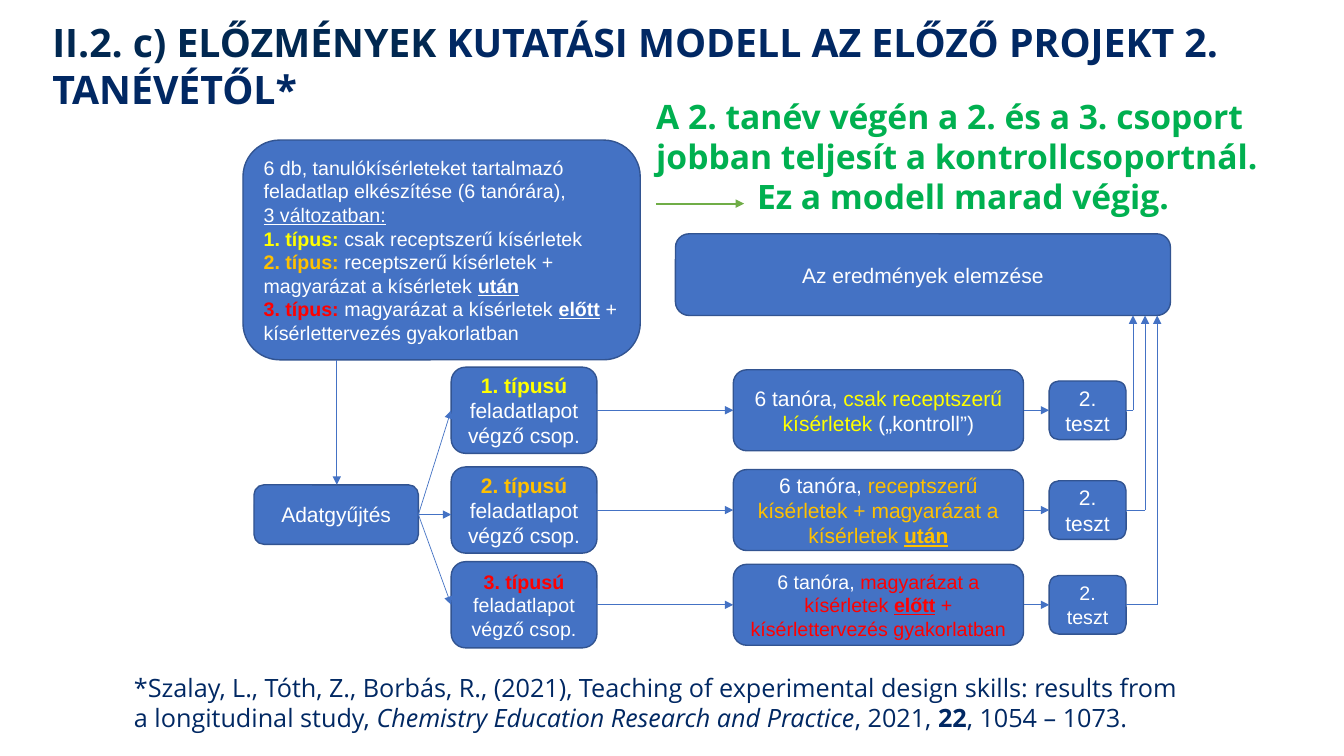
from collections import namedtuple

from lxml import etree
from pptx import Presentation, util as u
from pptx.dml.color import RGBColor
from pptx.enum import shapes, text
from pptx.oxml.ns import qn

COLORS = {
    "box": "4472C4", "edge": "325491", "white": "FFFFFF", "yellow": "FFFF00",
    "orange": "FFC000", "red": "FF0000", "navy": "012863", "dark": "012851",
    "green": "00B050", "arrow": "70AD47",
}
WIDTH, HEIGHT = u.Inches(13.33), u.Inches(7.5)
COLUMN, ROW = WIDTH / 100, HEIGHT / 100
KEY = {"bold": True, "underline": True}

Box = namedtuple("Box", "left top width height")


def right(box):
    return box.left + box.width


def bottom(box):
    return box.top + box.height


def middle(box):
    return box.top + box.height / 2


def part(box, offset, width, height):
    return Box(box.left + offset * box.width, middle(box) - height * box.height / 2,
               width * box.width, height * box.height)


def emu(box):
    return (round(box.left * COLUMN), round(box.top * ROW),
            round(box.width * COLUMN), round(box.height * ROW))


def add_run(paragraph, words, size=15, font="Arial", color="white",
            bold=False, italic=False, underline=False):
    run = paragraph.add_run()
    run.text = words
    run.font.size = u.Pt(size)
    run.font.name = font
    run.font.color.rgb = RGBColor.from_string(COLORS[color])
    run.font.bold = bold
    run.font.italic = italic
    run.font.underline = underline


def write(shape, paragraphs, align=text.PP_ALIGN.LEFT, **style):
    frame = shape.text_frame
    frame.word_wrap = True
    for index, runs in enumerate(paragraphs):
        paragraph = frame.add_paragraph() if index else frame.paragraphs[0]
        paragraph.alignment = align
        for words, changes in runs:
            add_run(paragraph, words, **{**style, **changes})


def add_text(slide, box, paragraphs, **style):
    shape = slide.shapes.add_textbox(*emu(box))
    write(shape, paragraphs, font="Open Sans", **style)
    return shape


def add_card(slide, box, paragraphs, align=text.PP_ALIGN.CENTER, **style):
    shape = slide.shapes.add_shape(shapes.MSO_SHAPE.ROUNDED_RECTANGLE, *emu(box))
    shape.shadow.inherit = False
    shape.fill.solid()
    shape.fill.fore_color.rgb = RGBColor.from_string(COLORS["box"])
    shape.line.color.rgb = RGBColor.from_string(COLORS["edge"])
    shape.line.width = u.Pt(1)
    shape.text_frame.vertical_anchor = text.MSO_ANCHOR.MIDDLE
    write(shape, paragraphs, align, **style)


def add_line(slide, x1, y1, x2, y2, color="box", weight=0.5, arrow=True):
    line = slide.shapes.add_connector(
        shapes.MSO_CONNECTOR.STRAIGHT, round(x1 * COLUMN), round(y1 * ROW),
        round(x2 * COLUMN), round(y2 * ROW))
    line.line.color.rgb = RGBColor.from_string(COLORS[color])
    line.line.width = u.Pt(weight)
    if arrow:
        etree.SubElement(line.line._get_or_add_ln(), qn("a:tailEnd"), type="triangle")
    etree.SubElement(line._element.spPr, qn("a:effectLst"))


def add_heading(slide, box):
    add_text(slide, box, [[
        ("II.2. c) ELŐZMÉNYEK ", {"color": "dark"}),
        ("KUTATÁSI MODELL AZ ELŐZŐ PROJEKT 2. TANÉVÉTŐL*", {}),
    ]], size=28, color="navy", bold=True)


def add_finding(slide, box):
    finding = add_text(slide, box, [
        [("A 2. tanév végén a 2. és a 3. csoport jobban teljesít a kontrollcsoportnál.", {})],
        [("Ez a modell marad végig.", {})],
    ], size=24, color="green", bold=True)
    conclusion = finding.text_frame.paragraphs[-1]
    properties = conclusion._p.get_or_add_pPr()
    properties.set("marL", str(u.Inches(1)))
    properties.set("indent", "0")
    start, level = box.left + 0.75, box.top + 0.855 * box.height
    add_line(slide, start, level, start + 6.52, level, color="arrow", weight=1.5)


def add_plan(slide, box):
    add_card(slide, box, [
        [("6 db, tanulókísérleteket tartalmazó feladatlap elkészítése (6 tanórára),", {})],
        [("3 változatban:", {"underline": True})],
        [("1. típus: ", {"color": "yellow", "bold": True}),
         ("csak receptszerű kísérletek", {})],
        [("2. típus: ", {"color": "orange", "bold": True}),
         ("receptszerű kísérletek + magyarázat a kísérletek ", {}), ("után", KEY)],
        [("3. típus: ", {"color": "red", "bold": True}),
         ("magyarázat a kísérletek ", {}), ("előtt", KEY),
         (" + kísérlettervezés gyakorlatban", {})],
    ], align=text.PP_ALIGN.LEFT, size=14)


def add_group_row(slide, box, number, color, size, lesson_runs, results, lane):
    group = part(box, 0, 0.216, 1)
    lesson = part(box, 0.418, 0.43, 0.94)
    test = part(box, 0.886, 0.114, 0.68)
    level = middle(box)
    add_card(slide, group, [[
        (f"{number}. típusú ", {"color": color, "bold": True}),
        ("feladatlapot végző csop.", {}),
    ]], size=size)
    add_card(slide, lesson, [[("6 tanóra, ", {}), *lesson_runs]], size=size)
    add_card(slide, test, [[("2. teszt", {})]], size=size)
    add_line(slide, right(group), level, lesson.left, level)
    add_line(slide, right(lesson), level, test.left, level)
    add_line(slide, right(test), level, lane, level, arrow=False)
    add_line(slide, lane, level, lane, bottom(results))


def add_model(slide):
    plan = Box(18.08, 18.53, 29.56, 29.07)
    collection = Box(18.9, 64.13, 12.23, 7.87)
    results = Box(50.26, 30.93, 36.83, 10.8)
    add_plan(slide, plan)
    add_card(slide, collection, [[("Adatgyűjtés", {})]])
    add_card(slide, results, [[("Az eredmények elemzése", {})]])
    add_line(slide, 25.06, bottom(plan), 25.06, collection.top)

    rows = [
        (54.27, 54.27, "yellow", 15,
         [("csak receptszerű kísérletek ", {"color": "yellow"}), ("(„kontroll”)", {})]),
        (67.47, middle(collection), "orange", 15,
         [("receptszerű kísérletek + magyarázat a kísérletek ", {"color": "orange"}),
          ("után", {"color": "orange", **KEY})]),
        (80, 80, "red", 14,
         [("magyarázat a kísérletek ", {"color": "red"}),
          ("előtt", {"color": "red", **KEY}),
          (" + kísérlettervezés gyakorlatban", {"color": "red"})]),
    ]
    for index, (level, entry, color, size, lesson_runs) in enumerate(rows):
        box = Box(33.57, level - 5.7, 50.22, 11.4)
        add_group_row(slide, box, index + 1, color, size, lesson_runs,
                      results, 84.3 + 0.9 * index)
        add_line(slide, right(collection), middle(collection), box.left, entry)


def add_citation(slide, box):
    add_text(slide, box, [[
        ("*Szalay, L., Tóth, Z., Borbás, R., (2021), Teaching of experimental design "
         "skills: results from a longitudinal study, ", {}),
        ("Chemistry Education Research and Practice", {"italic": True}),
        (", 2021, ", {}),
        ("22", {"bold": True}),
        (", 1054 – 1073.", {}),
    ]], size=18, color="navy")


def main():
    presentation = Presentation()
    presentation.slide_width, presentation.slide_height = WIDTH, HEIGHT
    slide = presentation.slides.add_slide(presentation.slide_layouts[6])
    add_model(slide)
    add_heading(slide, Box(3.15, 1.73, 92.2, 13.87))
    add_citation(slide, Box(9.23, 88.27, 79.22, 9.47))
    add_finding(slide, Box(48.09, 12, 50.26, 17.47))
    presentation.save("out.pptx")


if __name__ == "__main__":
    main()
